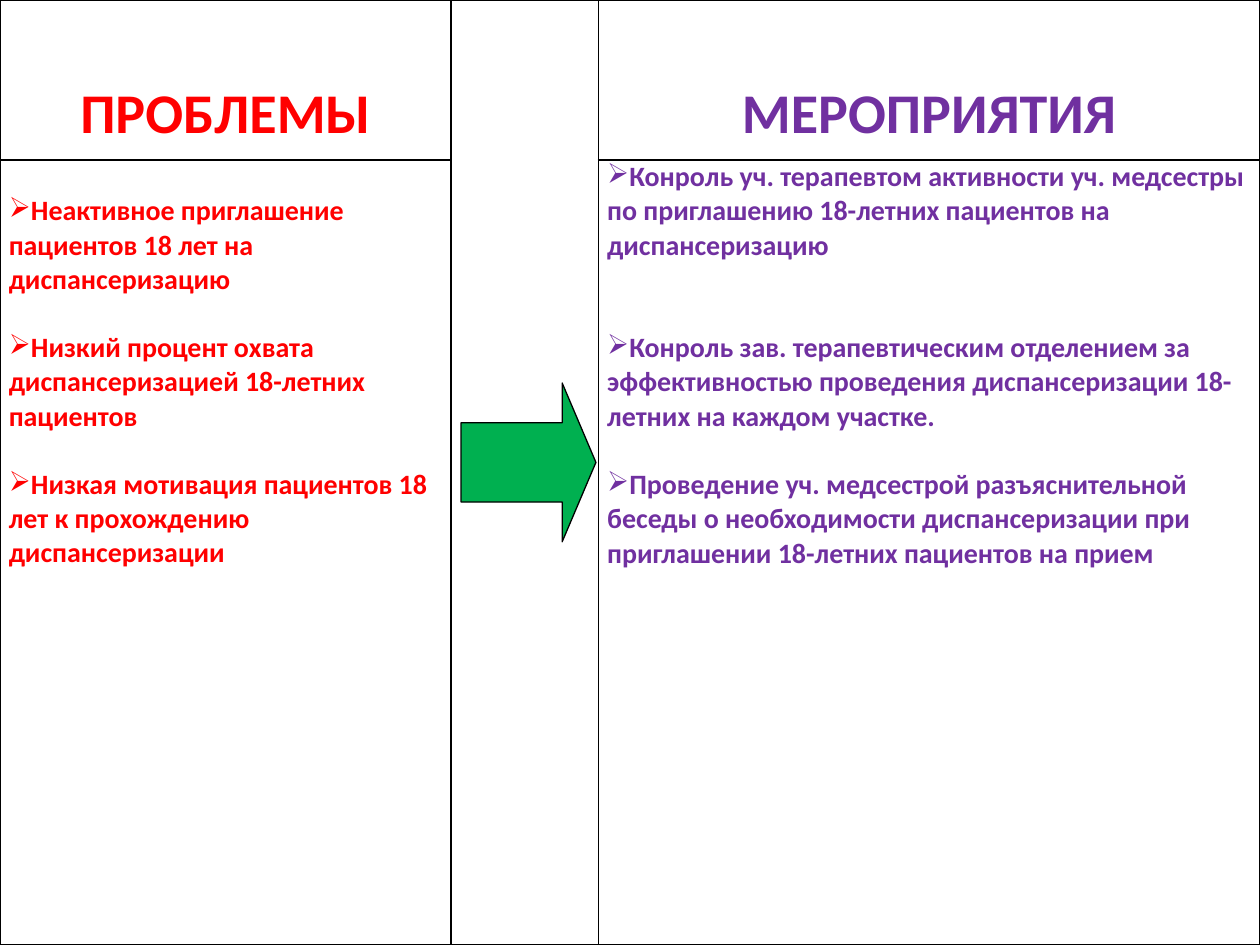
from lxml import etree
from pptx import Presentation
from pptx.dml.color import RGBColor
from pptx.enum.shapes import MSO_SHAPE
from pptx.enum.text import MSO_ANCHOR, PP_ALIGN
from pptx.oxml.ns import qn
from pptx.util import Inches, Pt

RIGHT_ARROW = MSO_SHAPE.RIGHT_ARROW
MIDDLE = MSO_ANCHOR.MIDDLE
CENTER = PP_ALIGN.CENTER

RED = RGBColor(0xFF, 0x00, 0x00)
PURPLE = RGBColor(0x70, 0x30, 0xA0)
GREEN = RGBColor(0x00, 0xB0, 0x50)
BLACK = RGBColor(0x00, 0x00, 0x00)
WHITE = RGBColor(0xFF, 0xFF, 0xFF)

COLUMN_WIDTHS = (3.58, 1.17, 5.25)
ROW_HEIGHTS = (1.27, 6.23)
BORDER_WIDTH = Pt(1)
LINE_HEIGHT = 19.53
CELL_MARGINS = {
    "margin_left": Inches(0.07),
    "margin_right": Inches(0.07),
    "margin_top": 0,
    "margin_bottom": 0,
}

PROBLEMS = (
    ("Неактивное приглашение пациентов 18 лет на диспансеризацию", 1),
    ("Низкий процент охвата диспансеризацией 18-летних пациентов", 1),
    ("Низкая мотивация пациентов 18 лет к прохождению диспансеризации", 1),
)
MEASURES = (
    ("Конроль уч. терапевтом активности уч. медсестры по приглашению "
     "18-летних пациентов на диспансеризацию", 0),
    ("Конроль зав. терапевтическим отделением за эффективностью проведения "
     "диспансеризации 18-летних на каждом участке.", 2),
    ("Проведение уч. медсестрой разъяснительной беседы о необходимости "
     "диспансеризации при приглашении 18-летних пациентов на прием", 1),
)


def set_attributes(target, values):
    """Set every named attribute of the target."""
    for attribute, value in values.items():
        setattr(target, attribute, value)


def add_bold_text(paragraph, text, size, color):
    """Add a bold Calibri run to the paragraph."""
    run = paragraph.add_run()
    run.text = text
    set_attributes(run.font, {"name": "Calibri", "size": Pt(size), "bold": True})
    run.font.color.rgb = color


def add_borders(cell):
    """Draw a thin black line on all four sides of the cell."""
    properties = cell._tc.get_or_add_tcPr()
    for side in ("a:lnL", "a:lnR", "a:lnT", "a:lnB"):
        line = etree.SubElement(properties, qn(side), w=str(BORDER_WIDTH))
        fill = etree.SubElement(line, qn("a:solidFill"))
        etree.SubElement(fill, qn("a:srgbClr"), val=str(BLACK))


def add_grid(slide):
    """Add the bordered table with its arrow column merged and return it."""
    table = slide.shapes.add_table(
        len(ROW_HEIGHTS), len(COLUMN_WIDTHS), 0, 0, Inches(10), Inches(7.5)
    ).table
    set_attributes(table, {"first_row": False, "horz_banding": False})
    for column, width in zip(table.columns, COLUMN_WIDTHS):
        column.width = Inches(width)
    for row, height in zip(table.rows, ROW_HEIGHTS):
        row.height = Inches(height)
    for cell in table.iter_cells():
        add_borders(cell)
        cell.fill.solid()
        cell.fill.fore_color.rgb = WHITE
        set_attributes(cell, CELL_MARGINS)
    table.cell(0, 1).merge(table.cell(1, 1))
    return table


def fill_heading(cell, text, color):
    """Write a centred column heading."""
    cell.vertical_anchor = MIDDLE
    heading = cell.text_frame.paragraphs[0]
    set_attributes(heading, {"alignment": CENTER, "line_spacing": 2.0})
    add_bold_text(heading, text, 32, color)


def fill_list(cell, items, color):
    """Write bulleted items, each below its number of skipped lines."""
    frame = cell.text_frame
    for index, (text, skipped_lines) in enumerate(items):
        gap = Pt(LINE_HEIGHT * skipped_lines)
        if index == 0:
            item = frame.paragraphs[0]
            cell.margin_top = gap
        else:
            item = frame.add_paragraph()
            item.space_before = gap
        properties = item._p.get_or_add_pPr()
        set_attributes(item, {"alignment": PP_ALIGN.LEFT})
        properties.set("marL", "0")
        properties.set("indent", "0")
        etree.SubElement(properties, qn("a:buChar"), char="➢")
        add_bold_text(item, text, 16, color)


def add_arrow(slide):
    """Add the green arrow leading from problems to measures."""
    arrow = slide.shapes.add_shape(
        RIGHT_ARROW, Inches(3.66), Inches(3.04), Inches(1.07), Inches(1.26)
    )
    arrow.shadow.inherit = False
    arrow.adjustments[0] = 0.5
    arrow.adjustments[1] = 0.25
    arrow.fill.solid()
    arrow.fill.fore_color.rgb = GREEN
    arrow.line.color.rgb = BLACK
    arrow.line.width = Pt(0.75)


def main():
    """Build the slide of problems and measures."""
    presentation = Presentation()
    set_attributes(
        presentation, {"slide_width": Inches(10), "slide_height": Inches(7.5)}
    )
    slide = presentation.slides.add_slide(presentation.slide_layouts[6])
    grid = add_grid(slide)
    for column, heading, items, color in (
        (0, "ПРОБЛЕМЫ", PROBLEMS, RED),
        (2, "МЕРОПРИЯТИЯ", MEASURES, PURPLE),
    ):
        fill_heading(grid.cell(0, column), heading, color)
        fill_list(grid.cell(1, column), items, color)
    add_arrow(slide)
    presentation.save("out.pptx")


if __name__ == "__main__":
    main()
